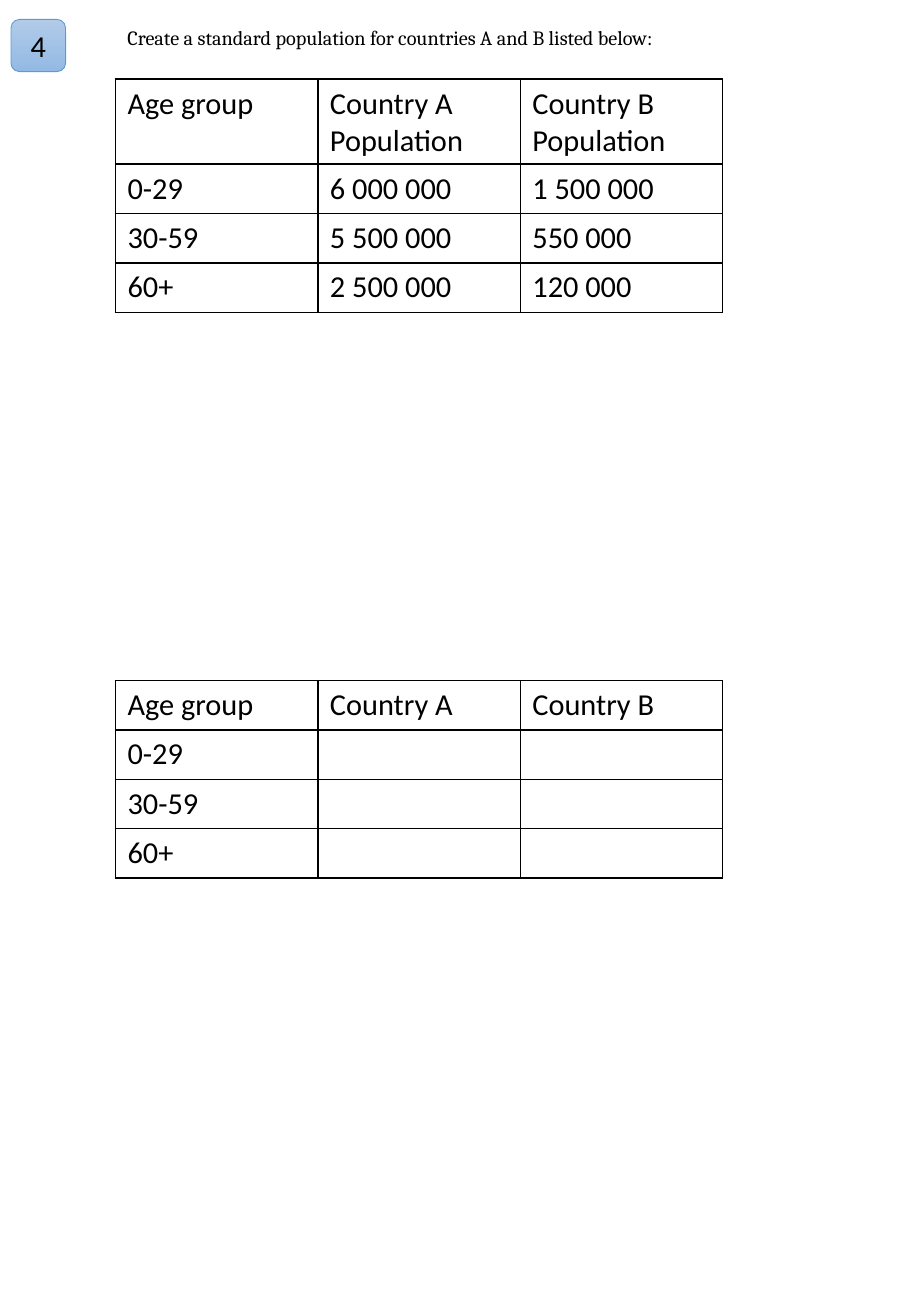
from pptx import Presentation
from pptx.dml.color import RGBColor
from pptx.enum.shapes import MSO_SHAPE as Shape
from pptx.enum.text import MSO_ANCHOR as Anchor, PP_ALIGN as Align
from pptx.oxml import parse_xml
from pptx.oxml.ns import nsdecls
from pptx.util import Inches, Pt

BLACK = "000000"
AGES = ["0-29", "30-59", "60+"]
LEFT, TOP = 0.95, 0.16
COLUMN, ROW, HEADER = 5 / 3, 0.407, 0.7


def color(hex_code):
    return RGBColor.from_string(hex_code)


def write(frame, text, size, font="Calibri"):
    frame.text = text
    for para in frame.paragraphs:
        for span in para.runs:
            span.font.size = Pt(size)
            span.font.name = font
            span.font.color.rgb = color(BLACK)


deck = Presentation()
deck.slide_width, deck.slide_height = Inches(7.5), Inches(10.83)
page = deck.slides.add_slide(deck.slide_layouts[6])

badge = page.shapes.add_shape(
    Shape.ROUNDED_RECTANGLE, Inches(0.09), Inches(TOP), Inches(0.45), Inches(0.43))
badge.shadow.inherit = False
badge.fill.gradient()
badge.fill.gradient_angle = 270
for stop, shade in zip(badge.fill.gradient_stops, ["B1CBE9", "93B9E4"]):
    stop.color.rgb = color(shade)
badge.line.color.rgb = color("5B9BD5")
badge.line.width = Pt(0.5)
write(badge.text_frame, "4", 18)
badge.text_frame.vertical_anchor = Anchor.MIDDLE
badge.text_frame.paragraphs[0].alignment = Align.CENTER

task = page.shapes.add_textbox(Inches(LEFT), Inches(TOP), Inches(5.76), Inches(0.71))
task.text_frame.word_wrap = True
write(task.text_frame,
      "Create a standard population for countries A and B listed below:", 12, "Cambria")

population = [
    ["Age group", "Country A\vPopulation", "Country B\nPopulation"],
    [AGES[0], "6 000 000", "1 500 000"],
    [AGES[1], "5 500 000", "550 000"],
    [AGES[2], "2 500 000", "120 000"],
]
answers = [["Age group", "Country A", "Country B"]] + [[age, "", ""] for age in AGES]

for rows, top, header in [(population, 0.65, HEADER), (answers, 5.6, ROW)]:
    table = page.shapes.add_table(
        len(rows), 3, Inches(LEFT), Inches(top),
        Inches(3 * COLUMN), Inches(header + 3 * ROW)).table
    table.first_row = table.horz_banding = False
    for column in table.columns:
        column.width = Inches(COLUMN)
    for number, texts in enumerate(rows):
        table.rows[number].height = Inches(ROW if number else header)
        for index, text in enumerate(texts):
            cell = table.cell(number, index)
            write(cell.text_frame, text, 18)
            properties = cell._tc.get_or_add_tcPr()
            for side in "LRTB":
                properties.append(parse_xml(
                    f'<a:ln{side} {nsdecls("a")} w="{Pt(1)}"><a:solidFill>'
                    f'<a:srgbClr val="{BLACK}"/></a:solidFill></a:ln{side}>'))
            cell.fill.background()

deck.save("out.pptx")
